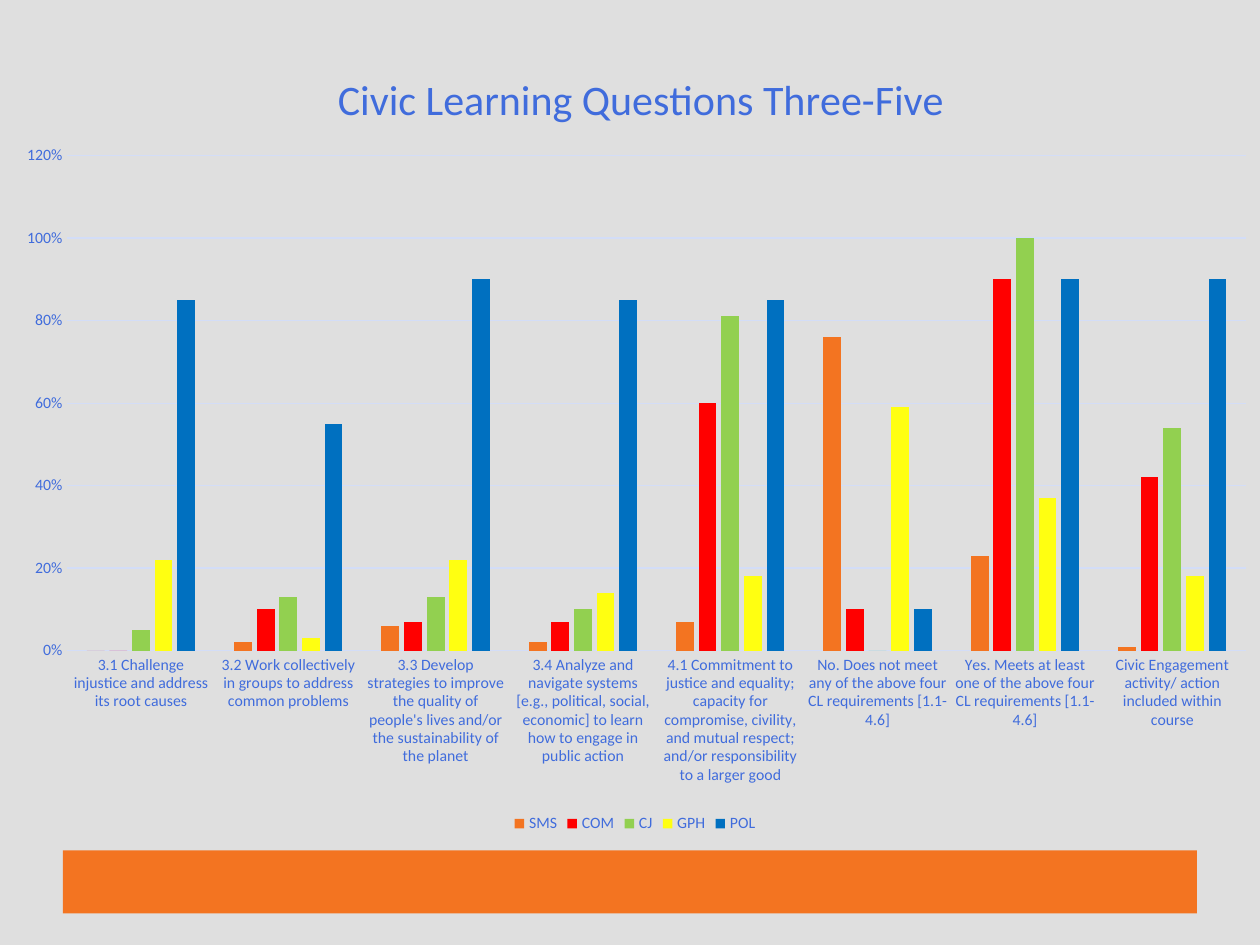
"""Build the civic learning slide: a clustered column chart above an orange band."""
from lxml import etree
from pptx import Presentation
from pptx.chart.data import CategoryChartData
from pptx.dml.color import RGBColor
from pptx.enum import chart as charts, shapes
from pptx.oxml import ns
from pptx.util import Inches, Pt

COLORS = {"background": "DFDFDF", "band": "F37421", "text": "406CDC", "grid": "D3DDF7",
          "SMS": "F37421", "COM": "FF0000", "CJ": "92D050", "GPH": "FFFF11", "POL": "0070C0"}
CATEGORIES = [
    "3.1 Challenge injustice and address its root causes",
    "3.2 Work collectively in groups to address common problems",
    "3.3 Develop strategies to improve the quality of people's lives and/or the sustainability of the planet",
    "3.4 Analyze and navigate systems [e.g., political, social, economic] to learn how to engage in public action",
    "4.1 Commitment to justice and equality; capacity for compromise, civility, and mutual respect; "
    "and/or responsibility to a larger good",
    "No. Does not meet any of the above four CL requirements [1.1-4.6]",
    "Yes. Meets at least one of the above four CL requirements [1.1-4.6]",
    "Civic Engagement activity/ action included within course",
]
SERIES = {
    "SMS": (0, 0.02, 0.06, 0.02, 0.07, 0.76, 0.23, 0.01),
    "COM": (0, 0.1, 0.07, 0.07, 0.6, 0.1, 0.9, 0.42),
    "CJ": (0.05, 0.13, 0.13, 0.1, 0.81, 0, 1, 0.54),
    "GPH": (0.22, 0.03, 0.22, 0.14, 0.18, 0.59, 0.37, 0.18),
    "POL": (0.85, 0.55, 0.9, 0.85, 0.85, 0.1, 0.9, 0.9),
}


def style_font(font, size):
    font.name = "Calibri"
    font.size = Pt(size)
    font.bold = False
    font.color.rgb = RGBColor.from_string(COLORS["text"])


def place_part(element, position, settings):
    for old_layout in element.findall(ns.qn("c:layout")):
        element.remove(old_layout)
    layout = etree.Element(ns.qn("c:layout"))
    manual = etree.SubElement(layout, ns.qn("c:manualLayout"))
    for name, value in settings.items():
        etree.SubElement(manual, ns.qn(f"c:{name}")).set("val", str(value))
    element.insert(position, layout)


presentation = Presentation()
presentation.slide_width, presentation.slide_height = Inches(10), Inches(7.5)
width, height = presentation.slide_width, presentation.slide_height
slide = presentation.slides.add_slide(presentation.slide_layouts[6])
slide.background.fill.solid()
slide.background.fill.fore_color.rgb = RGBColor.from_string(COLORS["background"])

band = slide.shapes.add_shape(shapes.MSO_SHAPE.RECTANGLE, int(width * 0.05), int(height * 0.9),
                              int(width * 0.9), Inches(0.5))
band.shadow.inherit = False
band.fill.solid()
band.fill.fore_color.rgb = RGBColor.from_string(COLORS["band"])
band.line.fill.background()

chart_data = CategoryChartData(number_format="0%")
chart_data.categories = CATEGORIES
for name, values in SERIES.items():
    chart_data.add_series(name, values)
chart = slide.shapes.add_chart(charts.XL_CHART_TYPE.COLUMN_CLUSTERED, 0, Inches(0.25),
                               Inches(10.08), Inches(6.4), chart_data).chart
style_font(chart.font, 9)

chart.has_title = True
title_frame = chart.chart_title.text_frame
title_frame.text = "Civic Learning Questions Three-Five"
style_font(title_frame.paragraphs[0].runs[0].font, 24)
chart.chart_title.include_in_layout = False
place_part(title_frame._txBody.getparent().getparent(), 1,
           {"xMode": "edge", "yMode": "edge", "x": 0.26, "y": 0.04})

chart.has_legend = True
chart.legend.position = charts.XL_LEGEND_POSITION.BOTTOM
chart.legend.include_in_layout = False
style_font(chart.legend.font, 9)

plot = chart.plots[0]
plot.gap_width, plot.overlap, plot.vary_by_categories = 219, -27, False
for series in plot.series:
    series.format.fill.solid()
    series.format.fill.fore_color.rgb = RGBColor.from_string(COLORS[series.name])
    series.invert_if_negative = False
place_part(chart._chartSpace.chart.plotArea, 0,
           {"layoutTarget": "inner", "xMode": "edge", "yMode": "edge",
            "x": 0.053, "y": 0.154, "w": 0.928, "h": 0.614})

category_axis, value_axis = chart.category_axis, chart.value_axis
for axis in (category_axis, value_axis):
    axis.major_tick_mark = axis.minor_tick_mark = charts.XL_TICK_MARK.NONE
    style_font(axis.tick_labels.font, 9)
value_axis.minimum_scale, value_axis.maximum_scale, value_axis.major_unit = 0, 1.2, 0.2
value_axis.tick_labels.number_format = "0%"
value_axis.tick_labels.number_format_is_linked = False
value_axis.format.line.fill.background()
value_axis.has_major_gridlines = True
for line in (category_axis.format.line, value_axis.major_gridlines.format.line):
    line.width = Pt(0.75)
    line.color.rgb = RGBColor.from_string(COLORS["grid"])

presentation.save("out.pptx")
